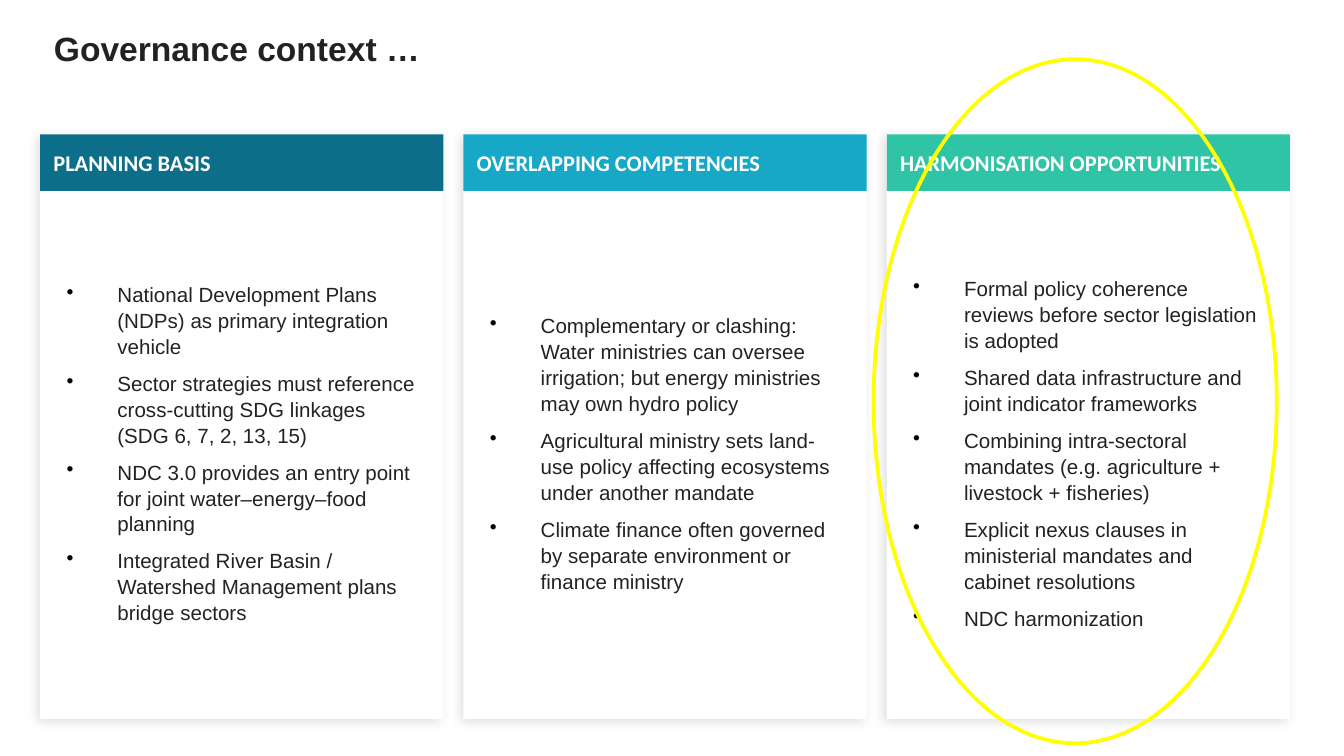
"""Build the governance context slide with three cards and a highlight ring."""
from dataclasses import dataclass

from lxml import etree
from pptx import Presentation
from pptx import util as u
from pptx.dml.color import RGBColor
from pptx.enum import shapes, text
from pptx.oxml import ns


@dataclass(frozen=True)
class Theme:
    """Colours, fonts and type sizes."""
    ink: str = "222222"
    white: str = "FFFFFF"
    black: str = "000000"
    ring: str = "FFFF00"
    sans: str = "Arial"
    label: str = "Calibri"
    title: int = 18
    head: int = 12
    body: int = 11


class Deck:
    """Holds the style and the current slide."""

    def __init__(self, theme, wide, high):
        """Start a deck with one title-only slide."""
        self.theme = theme
        self.prs = Presentation()
        self.prs.slide_width, self.prs.slide_height = u.Cm(wide), u.Cm(high)
        self.slide = self.prs.slides.add_slide(self.prs.slide_layouts[5])

    def node(self, parent, tag, **attrs):
        """Add a drawing element to a parent."""
        return etree.SubElement(parent, ns.qn(tag), attrs)

    def font(self, para, name, size, color, bold=False):
        """Set the font of a paragraph."""
        font = para.font
        font.name, font.size, font.bold = name, u.Pt(size), bold
        font.color.rgb = RGBColor.from_string(color)

    def frame(self, shape, inset=True):
        """Wrap and centre text vertically, with or without insets."""
        frame = shape.text_frame
        frame.word_wrap = True
        frame.auto_size = text.MSO_AUTO_SIZE.NONE
        frame.vertical_anchor = text.MSO_ANCHOR.MIDDLE
        if not inset:
            frame.margin_left = frame.margin_right = 0
            frame.margin_top = frame.margin_bottom = 0
        return frame

    def title(self, words, *box):
        """Place and format the title."""
        shape = self.slide.shapes.title
        shape.left, shape.top, shape.width, shape.height = map(u.Cm, box)
        para = self.frame(shape, inset=False).paragraphs[0]
        para.text, para.alignment = words, text.PP_ALIGN.LEFT
        self.font(para, self.theme.sans, self.theme.title, self.theme.ink, True)

    def rect(self, fill, *box):
        """Add a plain filled rectangle."""
        shape = self.slide.shapes.add_shape(
            shapes.MSO_SHAPE.RECTANGLE, *map(u.Cm, box))
        shape.shadow.inherit = False
        shape.fill.solid()
        shape.fill.fore_color.rgb = RGBColor.from_string(fill)
        shape.line.fill.background()
        return shape

    def shade(self, shape):
        """Give a shape a soft shadow."""
        effects = shape.element.spPr.find(ns.qn("a:effectLst"))
        outer = self.node(effects, "a:outerShdw", blurRad=str(u.Pt(6)),
                          dist=str(u.Pt(2)), dir="8100000",
                          algn="bl", rotWithShape="0")
        color = self.node(outer, "a:srgbClr", val=self.theme.black)
        self.node(color, "a:alpha", val="12000")

    def head(self, words, *box):
        """Add a card heading."""
        shape = self.slide.shapes.add_textbox(*map(u.Cm, box))
        para = self.frame(shape, inset=False).paragraphs[0]
        para.text = words
        self.font(para, self.theme.label, self.theme.head,
                  self.theme.white, True)

    def list(self, items, *box):
        """Add a bulleted list."""
        frame = self.frame(self.slide.shapes.add_textbox(*map(u.Cm, box)))
        for i, item in enumerate(items):
            para = frame.add_paragraph() if i else frame.paragraphs[0]
            para.text = item
            props = para._p.get_or_add_pPr()
            indent = u.Cm(0.96)
            props.set("marL", str(indent))
            props.set("indent", str(-indent))
            color = self.node(props, "a:buClr")
            self.node(color, "a:srgbClr", val=self.theme.black)
            self.node(props, "a:buChar", char="•")
            para.line_spacing, para.space_after = 1.05, u.Pt(6)
            self.font(para, self.theme.sans, self.theme.body, self.theme.ink)

    def card(self, left, color, name, items):
        """Add a card with a coloured header and a list."""
        self.shade(self.rect(self.theme.white, left, 2.54, 7.62, 11.05))
        self.rect(color, left, 2.54, 7.62, 1.07)
        self.head(name, left + 0.25, 2.62, 7.11, 0.91)
        self.list(items, left + 0.25, 3.86, 7.11, 9.4)

    def ring(self, *box):
        """Add a hollow highlight ellipse."""
        shape = self.slide.shapes.add_shape(
            shapes.MSO_SHAPE.OVAL, *map(u.Cm, box))
        shape.shadow.inherit = False
        shape.fill.background()
        shape.line.color.rgb = RGBColor.from_string(self.theme.ring)
        shape.line.width = u.Pt(2)


CARDS = [
    ("0D6E8A", "PLANNING BASIS", [
        "National Development Plans (NDPs) as primary integration vehicle",
        "Sector strategies must reference cross-cutting SDG linkages "
        "(SDG 6, 7, 2, 13, 15)",
        "NDC 3.0 provides an entry point for joint water–energy–food planning",
        "Integrated River Basin / Watershed Management plans bridge sectors",
    ]),
    ("17A7C7", "OVERLAPPING COMPETENCIES", [
        "Complementary or clashing: Water ministries can oversee irrigation; "
        "but energy ministries may own hydro policy",
        "Agricultural ministry sets land-use policy affecting ecosystems "
        "under another mandate",
        "Climate finance often governed by separate environment or "
        "finance ministry",
    ]),
    ("2EC4A5", "HARMONISATION OPPORTUNITIES", [
        "Formal policy coherence reviews before sector legislation is adopted",
        "Shared data infrastructure and joint indicator frameworks",
        "Combining intra-sectoral mandates "
        "(e.g. agriculture + livestock + fisheries)",
        "Explicit nexus clauses in ministerial mandates and "
        "cabinet resolutions",
        "NDC harmonization",
    ]),
]


def main():
    """Build and save the deck."""
    deck = Deck(Theme(), 25.4, 14.29)
    deck.title("Governance context …", 1.02, 0.25, 23.37, 1.32)
    for i, card in enumerate(CARDS):
        deck.card(0.76 + 8 * i, *card)
    deck.ring(16.51, 1.12, 7.62, 12.93)
    deck.prs.save("out.pptx")


if __name__ == "__main__":
    main()
